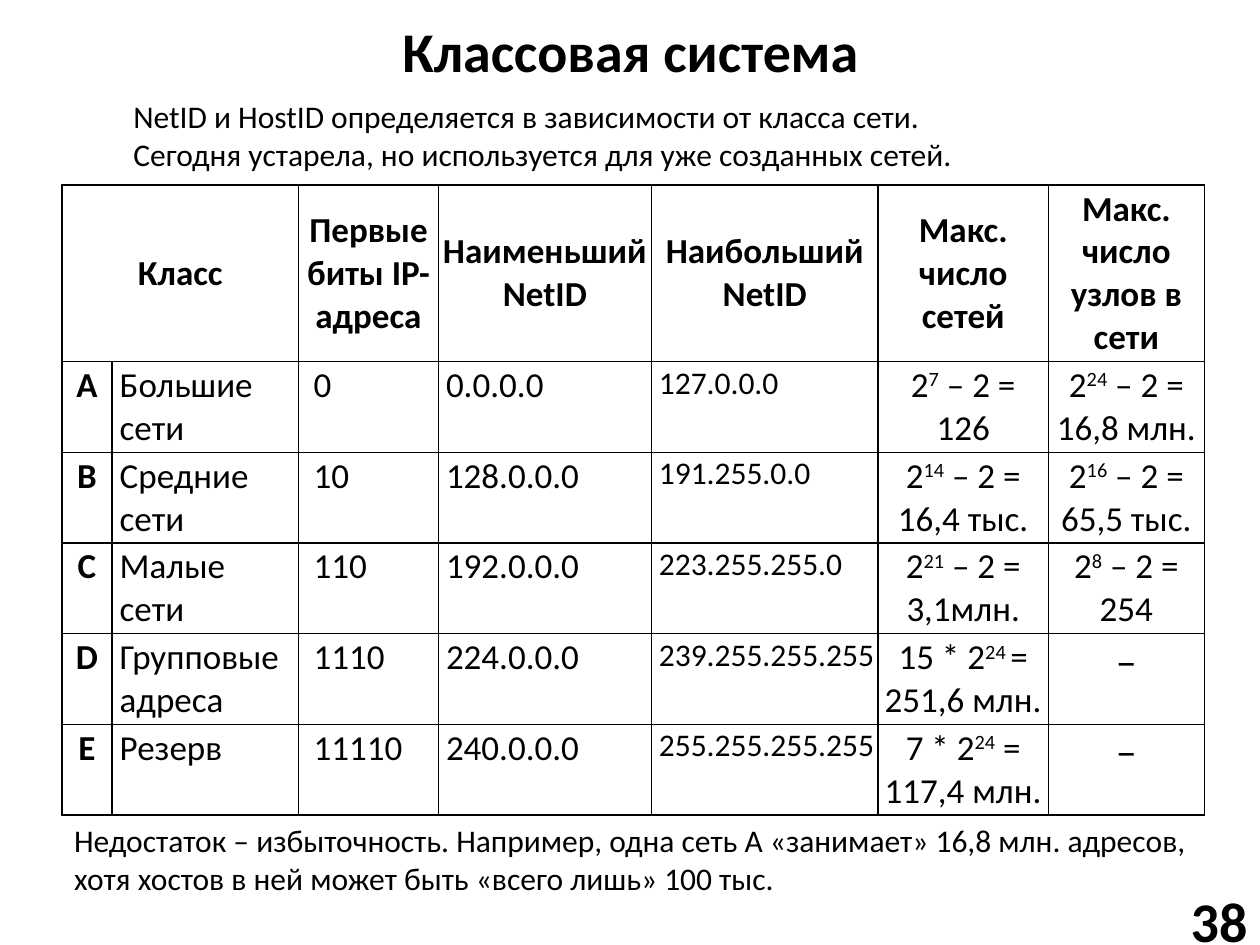
from dataclasses import dataclass

from lxml import etree
from pptx import Presentation
from pptx.dml.color import RGBColor
from pptx.enum.text import MSO_ANCHOR, PP_ALIGN
from pptx.oxml.ns import qn
from pptx.util import Inches, Pt

LEFT, CENTER, RIGHT, JUSTIFY = (
    PP_ALIGN.LEFT, PP_ALIGN.CENTER, PP_ALIGN.RIGHT, PP_ALIGN.JUSTIFY)
TOP, MIDDLE = MSO_ANCHOR.TOP, MSO_ANCHOR.MIDDLE
BLANK = 6
GRID_COLUMNS, GRID_ROWS = 100, 75


@dataclass(frozen=True)
class Theme:
    font: str = "Calibri"
    ink: str = "000000"
    paper: str = "FFFFFF"
    heading: int = 32
    dash: int = 24
    cell: int = 20
    body: int = 18
    border: float = 1
    cell_inset: float = 0.02


def write_text(frame, text, *, theme, size, bold=False, align=LEFT,
               left=0, first=0):
    """Fill a frame: lines become paragraphs, ^marked^ parts superscripts."""
    frame.word_wrap = True
    for number, line in enumerate(text.split("\n")):
        paragraph = frame.paragraphs[0] if number == 0 else frame.add_paragraph()
        paragraph.alignment = align
        properties = paragraph._p.get_or_add_pPr()
        properties.set("marL", str(Inches(left)))
        properties.set("indent", str(Inches(first)))
        for part_number, part in enumerate(line.split("^")):
            run = paragraph.add_run()
            run.text = part
            run.font.name = theme.font
            run.font.size = Pt(size)
            run.font.bold = bold
            run.font.color.rgb = RGBColor.from_string(theme.ink)
            if part_number % 2:
                run._r.get_or_add_rPr().set("baseline", "30000")


class SlideBuilder:
    def __init__(self, presentation, theme):
        self.theme = theme
        self.column = presentation.slide_width / GRID_COLUMNS
        self.row = presentation.slide_height / GRID_ROWS
        self.slide = presentation.slides.add_slide(
            presentation.slide_layouts[BLANK])
        background = self.slide.background.fill
        background.solid()
        background.fore_color.rgb = RGBColor.from_string(theme.paper)

    def place(self, left, top, width, height):
        return (round(left * self.column), round(top * self.row),
                round(width * self.column), round(height * self.row))

    def text(self, area, text, *, anchor=TOP, **style):
        frame = self.slide.shapes.add_textbox(*self.place(*area)).text_frame
        frame.vertical_anchor = anchor
        write_text(frame, text, theme=self.theme, **style)

    def table(self, left, top, widths, heights):
        area = self.place(left, top, sum(widths), sum(heights))
        table = self.slide.shapes.add_table(
            len(heights), len(widths), *area).table
        table.first_row = table.horz_banding = False
        for column, width in zip(table.columns, widths):
            column.width = round(width * self.column)
        for row, height in zip(table.rows, heights):
            row.height = round(height * self.row)
        for cell in table.iter_cells():
            self.frame_cell(cell)
        return table

    def frame_cell(self, cell):
        inset = Inches(self.theme.cell_inset)
        cell.margin_left = cell.margin_right = inset
        cell.margin_top = cell.margin_bottom = inset
        properties = cell._tc.get_or_add_tcPr()
        for side in ("a:lnL", "a:lnR", "a:lnT", "a:lnB"):
            line = etree.SubElement(
                properties, qn(side), w=str(Pt(self.theme.border)))
            fill = etree.SubElement(line, qn("a:solidFill"))
            etree.SubElement(fill, qn("a:srgbClr"), val=self.theme.ink)
        cell.fill.solid()
        cell.fill.fore_color.rgb = RGBColor.from_string(self.theme.paper)

    def cell(self, cell, text, *, anchor=TOP, **style):
        cell.vertical_anchor = anchor
        write_text(cell.text_frame, text, theme=self.theme, **style)


HEADINGS = {
    0: "Класс",
    2: "Первые биты IP-адреса",
    3: "Наименьший NetID",
    4: "Наибольший NetID",
    5: "Макс. число сетей",
    6: "Макс. число узлов в сети",
}
NETWORK_CLASSES = [
    ("A", "Большие сети", "0", "0.0.0.0", "127.0.0.0",
     "2^7^ – 2 = 126", "2^24^ – 2 = 16,8 млн."),
    ("B", "Средние сети", "10", "128.0.0.0", "191.255.0.0",
     "2^14^ – 2 = 16,4 тыс.", "2^16^ – 2 = 65,5 тыс."),
    ("C", "Малые сети", "110", "192.0.0.0", "223.255.255.0",
     "2^21^ – 2 = 3,1млн.", "2^8^ – 2 = 254"),
    ("D", "Групповые адреса", "1110", "224.0.0.0", "239.255.255.255",
     "15 * 2^24 ^= 251,6 млн.", "–"),
    ("E", "Резерв", "11110", "240.0.0.0", "255.255.255.255",
     "7 * 2^24^ = 117,4 млн.", "–"),
]
COLUMN_WIDTHS = [4, 14.8, 11.1, 16.9, 18, 13.5, 12.4]
ROW_HEIGHTS = [14] + [7.2] * len(NETWORK_CLASSES)


def main():
    presentation = Presentation()
    presentation.slide_width, presentation.slide_height = Inches(10), Inches(7.5)
    theme = Theme()
    page = SlideBuilder(presentation, theme)

    # Title and page number
    heading = dict(size=theme.heading, bold=True, anchor=MIDDLE)
    page.text((2.8, 0.5, 94.5, 6.9), "Классовая система",
              align=CENTER, **heading)
    page.text((88.6, 71, 11.4, 4), "38", align=RIGHT, **heading)

    # Table of network classes
    classes = page.table(4.9, 14.7, COLUMN_WIDTHS, ROW_HEIGHTS)
    classes.cell(0, 0).merge(classes.cell(0, 1))
    for column, label in HEADINGS.items():
        page.cell(classes.cell(0, column), label, size=theme.cell,
                  bold=True, align=CENTER, anchor=MIDDLE)

    column_styles = [
        dict(bold=True, align=CENTER),
        dict(left=0.04),
        dict(left=0.1),
        dict(left=0.04),
        dict(left=0.04, size=theme.body),
        dict(align=CENTER),
        dict(align=CENTER),
    ]
    for row, values in enumerate(NETWORK_CLASSES, start=1):
        for column, (value, style) in enumerate(zip(values, column_styles)):
            size = theme.dash if value == "–" else theme.cell
            page.cell(classes.cell(row, column), value,
                      **{"size": size, **style})

    # Introduction above the table, drawback below it
    page.text((5.7, 7.2, 89, 7.1),
              "NetID и HostID определяется в зависимости от класса сети.\n"
              "Сегодня устарела, но используется для уже созданных сетей.",
              size=theme.body, align=JUSTIFY, first=0.39)
    page.text((4.9, 64.7, 90.6, 7.1),
              "Недостаток – избыточность. Например, одна сеть A «занимает» "
              "16,8 млн. адресов, хотя хостов в ней может быть "
              "«всего лишь» 100 тыс.",
              size=theme.body)

    presentation.save("out.pptx")


if __name__ == "__main__":
    main()
